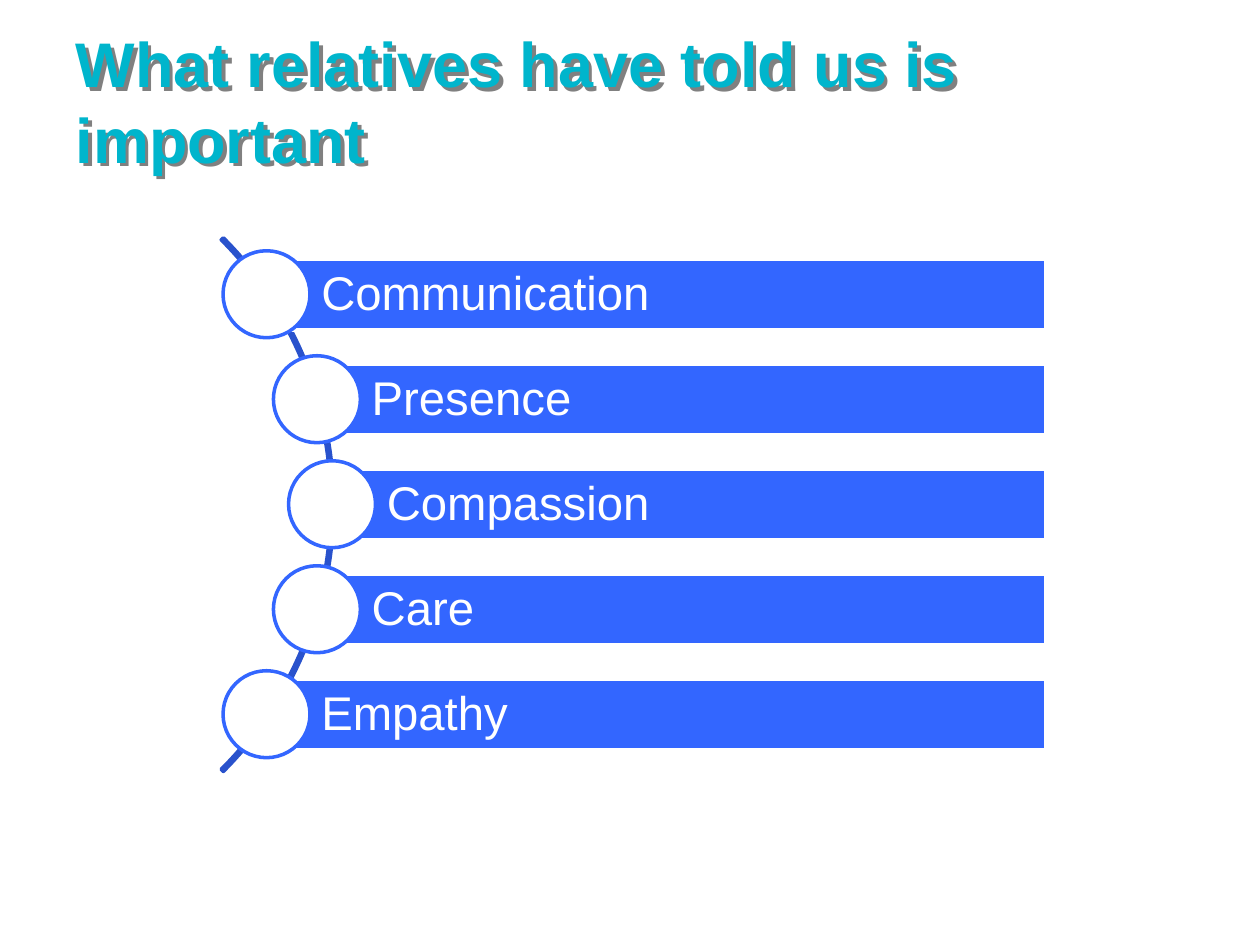
from lxml import etree
from pptx import Presentation
from pptx.dml.color import RGBColor
from pptx.enum import shapes, text
from pptx.oxml import ns
from pptx.util import Inches, Pt

TEAL = RGBColor(0x00, 0xB5, 0xCC)
BLUE = RGBColor(0x33, 0x66, 0xFF)
DARK_BLUE = RGBColor(0x29, 0x52, 0xCC)
WHITE = RGBColor(0xFF, 0xFF, 0xFF)
GRAY = RGBColor(0x80, 0x80, 0x80)

THEMES = [("Communication", 2.11), ("Presence", 2.51), ("Compassion", 2.63),
          ("Care", 2.51), ("Empathy", 2.11)]
BAR_RIGHT = 8.3
BAR_HEIGHT = 0.56
CIRCLE_SIZE = 0.69
FIRST_CENTER = 2.34
ROW_STEP = 2.5 / 3


def add_shape(kind, left, top, width, height, fill, line):
    shape = slide.shapes.add_shape(
        kind, Inches(left), Inches(top), Inches(width), Inches(height))
    shape.shadow.inherit = False
    if fill is None:
        shape.fill.background()
    else:
        shape.fill.solid()
        shape.fill.fore_color.rgb = fill
    shape.line.color.rgb = line
    shape.line.width = Pt(2)
    return shape


def add_run(paragraph, words, size, color):
    run = paragraph.add_run()
    run.text = words
    run.font.size = Pt(size)
    run.font.name = "Arial"
    run.font.color.rgb = color
    return run


presentation = Presentation()
presentation.slide_width = Inches(10)
presentation.slide_height = Inches(7.5)
slide = presentation.slides.add_slide(presentation.slide_layouts[5])

title = slide.shapes.title
title.left, title.top = Inches(0.5), Inches(0.17)
title.width, title.height = Inches(8.5), Inches(1.25)
title.fill.background()
title.shadow.inherit = False
effects = title._element.spPr.find(ns.qn("a:effectLst"))
shadow = etree.SubElement(effects, ns.qn("a:outerShdw"),
                          dist=str(Pt(3)), dir="2700000", algn="ctr", rotWithShape="0")
etree.SubElement(shadow, ns.qn("a:srgbClr"), val=str(GRAY))
title_frame = title.text_frame
title_frame.word_wrap = True
title_frame.auto_size = text.MSO_AUTO_SIZE.NONE
title_frame.vertical_anchor = text.MSO_ANCHOR.MIDDLE
title_paragraph = title_frame.paragraphs[0]
title_paragraph.alignment = text.PP_ALIGN.LEFT
title_run = add_run(title_paragraph, "What relatives have told us is important", 36, TEAL)
title_run.font.bold = True

arc = add_shape(shapes.MSO_SHAPE.BLOCK_ARC, -3.34, 1.01, 5.99, 5.99, None, DARK_BLUE)
for index, value in enumerate((189, 27, 0.004)):
    arc.adjustments[index] = value

for row, (theme, left) in enumerate(THEMES):
    center = FIRST_CENTER + row * ROW_STEP
    bar = add_shape(shapes.MSO_SHAPE.RECTANGLE, left, center - BAR_HEIGHT / 2,
                    BAR_RIGHT - left, BAR_HEIGHT, BLUE, WHITE)
    frame = bar.text_frame
    frame.word_wrap = True
    frame.vertical_anchor = text.MSO_ANCHOR.MIDDLE
    frame.margin_left = Inches(0.44)
    frame.margin_top = frame.margin_right = frame.margin_bottom = Inches(0.07)
    paragraph = frame.paragraphs[0]
    paragraph.alignment = text.PP_ALIGN.LEFT
    paragraph.line_spacing = 0.9
    add_run(paragraph, theme, 27, WHITE)
    add_shape(shapes.MSO_SHAPE.OVAL, left - 0.34, center - 0.35,
              CIRCLE_SIZE, CIRCLE_SIZE, WHITE, BLUE)

presentation.save("out.pptx")
